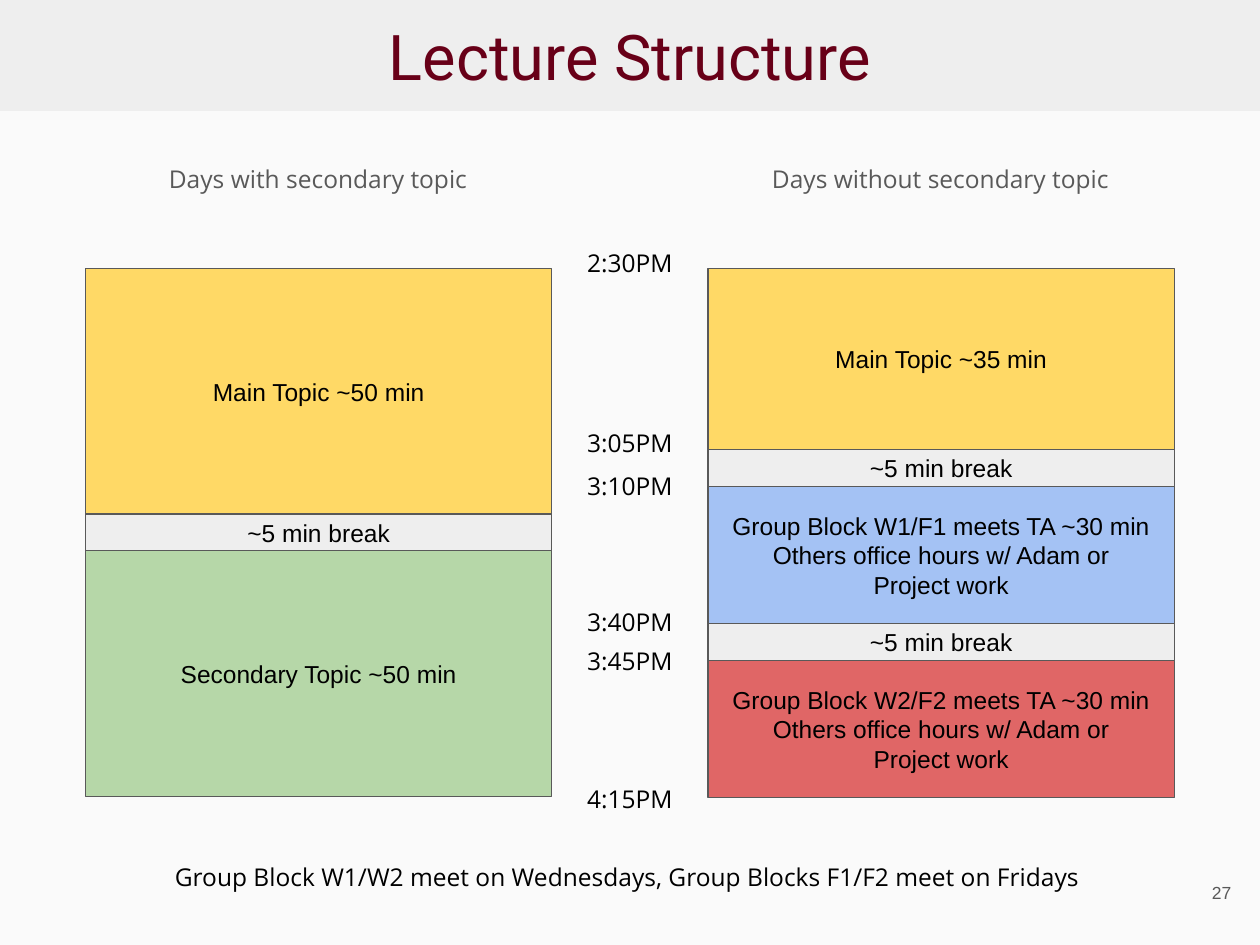
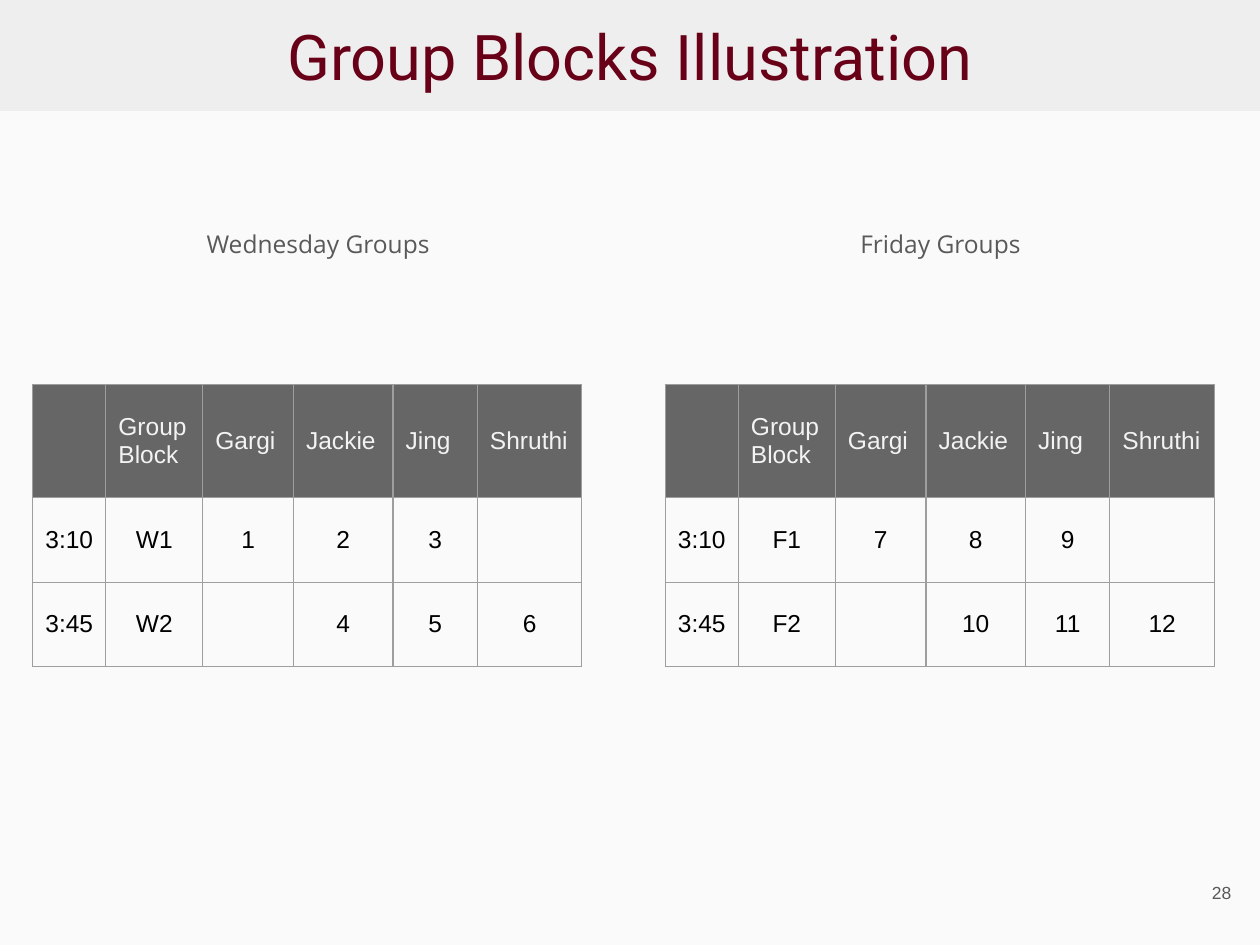
from copy import deepcopy
from itertools import accumulate

from lxml.etree import SubElement
from pptx import Presentation
from pptx.dml.color import RGBColor
from pptx.enum.shapes import MSO_SHAPE
from pptx.enum.text import MSO_ANCHOR, PP_ALIGN
from pptx.oxml.ns import qn
from pptx.util import Inches, Pt

COLORS = {
    "page": "FAFAFA", "band": "EEEEEE", "main": "FFD966", "secondary": "B6D7A8",
    "first": "A4C2F4", "second": "E06666", "edge": "595959",
    "head": "666666", "grid": "9E9E9E",
}
# font, size, colour, alignment, vertical anchor, extra paragraph format
TEXT = {
    "title": ("Roboto", 36, "680018", PP_ALIGN.CENTER, MSO_ANCHOR.MIDDLE, {}),
    "heading": ("Open Sans", 14, "595959", PP_ALIGN.CENTER, MSO_ANCHOR.TOP,
                {"line_spacing": 1.15, "space_before": Pt(10), "space_after": Pt(24)}),
    "label": ("Open Sans", 14, "000000", PP_ALIGN.CENTER, MSO_ANCHOR.TOP, {}),
    "block": ("Arial", 14, "000000", PP_ALIGN.CENTER, MSO_ANCHOR.MIDDLE, {}),
    "table head": ("Arial", 14, "F3F3F3", PP_ALIGN.LEFT, MSO_ANCHOR.MIDDLE, {}),
    "number": ("Arial", 10, "595959", PP_ALIGN.RIGHT, MSO_ANCHOR.MIDDLE, {}),
}
MARGINS = {f"margin_{side}": Inches(0.1) for side in ("left", "right", "top", "bottom")}


def write(frame, text, style):
    """Fill a text frame; a newline starts a paragraph, a vertical tab a line."""
    font, size, color, align, anchor, spacing = TEXT[style]
    for name, value in {"word_wrap": True, "vertical_anchor": anchor, **MARGINS}.items():
        setattr(frame, name, value)
    frame.text = text
    for paragraph in frame.paragraphs:
        for name, value in {"alignment": align, **spacing}.items():
            setattr(paragraph, name, value)
        for run in paragraph.runs:
            run.font.name, run.font.size = font, Pt(size)
            run.font.color.rgb = RGBColor.from_string(color)
        for line_break in paragraph._p.findall(qn("a:br")):
            line_break.append(deepcopy(run._r.rPr))


def add_box(slide, place, text, style, fill=None, edge=None):
    """Add a text box, or a rectangle when a fill is given."""
    place = [Inches(length) for length in place]
    if fill is None:
        box = slide.shapes.add_textbox(*place)
    else:
        box = slide.shapes.add_shape(MSO_SHAPE.RECTANGLE, *place)
        box.shadow.inherit = False
        box.fill.solid()
        box.fill.fore_color.rgb = RGBColor.from_string(COLORS[fill])
        if edge:
            box.line.color.rgb = RGBColor.from_string(COLORS[edge])
            box.line.width = Pt(0.75)
        else:
            box.line.fill.background()
    write(box.text_frame, text, style)


prs = Presentation()
prs.slide_width, prs.slide_height = Inches(10), Inches(7.5)

# Title band, the two column headings and the page number
COLUMN_LEFTS = (0.34, 5.28)
pages = [
    ("Lecture Structure", 27, 1.17,
     ("Days with secondary topic", "Days without secondary topic")),
    ("Group Blocks Illustration", 28, 1.68, ("Wednesday Groups", "Friday Groups")),
]
slides = []
for title, number, heading_top, headings in pages:
    slide = prs.slides.add_slide(prs.slide_layouts[6])
    slide.background.fill.solid()
    slide.background.fill.fore_color.rgb = RGBColor.from_string(COLORS["page"])
    add_box(slide, (0, 0, 10, 0.88), title, "title", "band")
    for left, heading in zip(COLUMN_LEFTS, headings):
        add_box(slide, (left, heading_top, 4.37, 0.7), heading, "heading")
    add_box(slide, (9.27, 6.8, 0.6, 0.57), str(number), "number")
    slides.append(slide)
structure, illustration = slides

# Lecture timelines, each stacked downwards from the same start
START, BREAK_HEIGHT = 2.13, 0.29
pause = (BREAK_HEIGHT, "band", "~5 min break")
others = "Others office hours w/ Adam or\vProject work"
timelines = {
    0.68: [(1.95, "main", "Main Topic ~50 min"), pause,
           (1.95, "secondary", "Secondary Topic ~50 min")],
    5.62: [(1.44, "main", "Main Topic ~35 min"), pause,
           (1.09, "first", f"Group Block W1/F1 meets TA ~30 min\n{others}"), pause,
           (1.09, "second", f"Group Block W2/F2 meets TA ~30 min\n{others}")],
}
for left, blocks in timelines.items():
    tops = accumulate((height for height, _, _ in blocks), initial=START)
    for top, (height, fill, text) in zip(tops, blocks):
        add_box(structure, (left, top, 3.7, height), text, "block", fill, "edge")

times = {"2:30PM": 1.87, "3:05PM": 3.3, "3:10PM": 3.64,
         "3:40PM": 4.72, "3:45PM": 5.03, "4:15PM": 6.12}
for time, top in times.items():
    add_box(structure, (4.46, top, 1.08, 0.44), time, "label")
add_box(structure, (0.68, 6.74, 8.65, 0.44),
        "Group Block W1/W2 meet on Wednesdays, Group Blocks F1/F2 meet on Fridays ", "label")

# Group tables
WIDTHS = (0.58, 0.77, 0.72, 0.79, 0.67, 0.83)
HEIGHTS = (0.9, 0.67, 0.67)
header = ("", "Group Block", "Gargi", "Jackie", "Jing", "Shruthi")
schedules = {
    0.26: [("3:10", "W1", "1", "2", "3", ""), ("3:45", "W2", "", "4", "5", "6")],
    5.28: [("3:10", "F1", "7", "8", "9", ""), ("3:45", "F2", "", "10", "11", "12")],
}
for left, sessions in schedules.items():
    table = illustration.shapes.add_table(
        len(HEIGHTS), len(WIDTHS), Inches(left), Inches(3.05),
        Inches(sum(WIDTHS)), Inches(sum(HEIGHTS))).table
    table.first_row = table.horz_banding = False
    for column, width in zip(table.columns, WIDTHS):
        column.width = Inches(width)
    for row, height, entries in zip(table.rows, HEIGHTS, [header, *sessions]):
        row.height = Inches(height)
        for cell, entry in zip(row.cells, entries):
            is_head = entries is header
            write(cell.text_frame, entry, "table head" if is_head else "block")
            cell.vertical_anchor = MSO_ANCHOR.MIDDLE
            for name, value in MARGINS.items():
                setattr(cell, name, value)
            properties = cell._tc.get_or_add_tcPr()
            for side in ("lnL", "lnR", "lnT", "lnB"):
                border = SubElement(properties, qn(f"a:{side}"), w=str(Pt(0.75)))
                paint = SubElement(border, qn("a:solidFill"))
                SubElement(paint, qn("a:srgbClr"), val=COLORS["grid"])
            if is_head:
                cell.fill.solid()
                cell.fill.fore_color.rgb = RGBColor.from_string(COLORS["head"])
            else:
                cell.fill.background()

prs.save("out.pptx")
